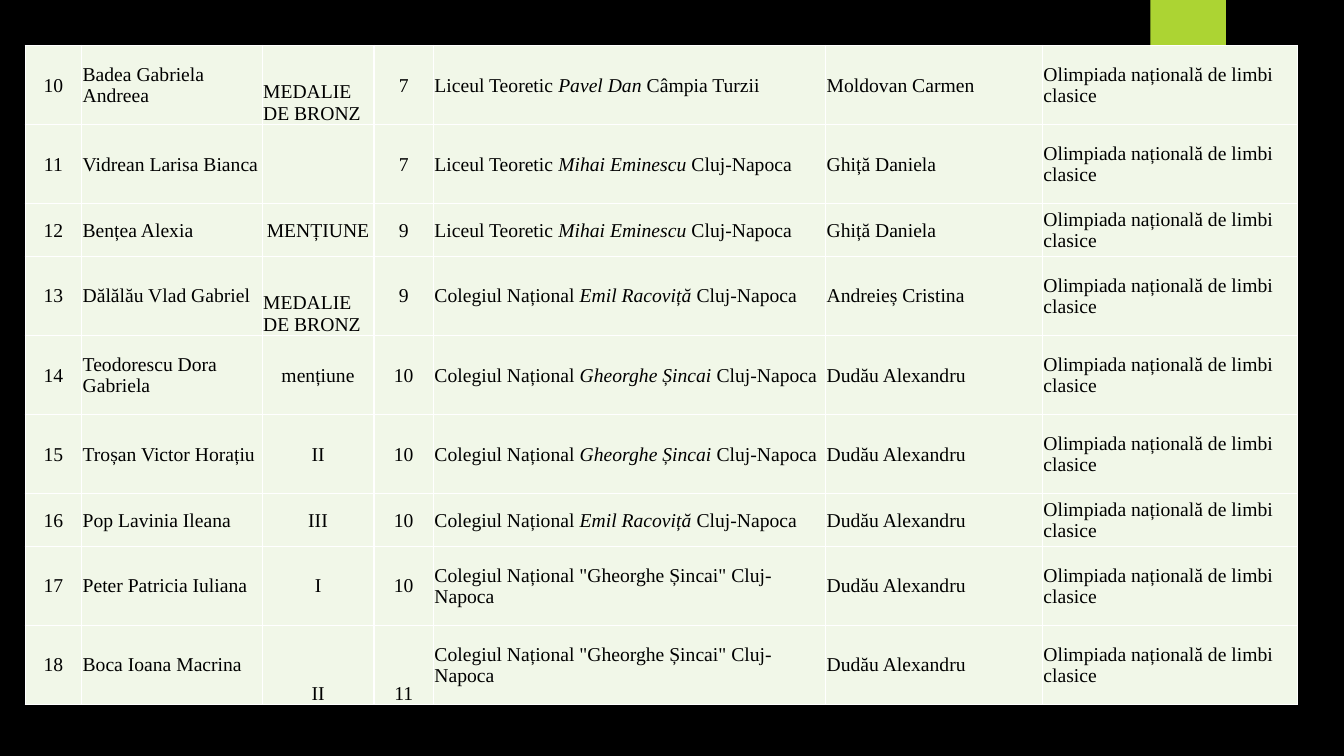
from dataclasses import dataclass

from lxml.etree import SubElement
from pptx import Presentation
from pptx.dml.color import RGBColor
from pptx.enum.shapes import MSO_SHAPE
from pptx.enum.text import MSO_ANCHOR, PP_ALIGN
from pptx.oxml.ns import qn
from pptx.util import Inches, Pt


@dataclass(frozen=True)
class Theme:
    background: str = "000000"
    accent: str = "ACD433"
    cell: str = "F1F7E8"
    border: str = "FFFFFF"
    text: str = "000000"
    font: str = "Times New Roman"
    size: float = 14
    border_width: float = 1


def set_all(target, values):
    for name, value in values.items():
        setattr(target, name, value)


class Deck:
    def __init__(self, theme):
        self.theme = theme
        self.prs = Presentation()
        set_all(self.prs, {"slide_width": Inches(13.33), "slide_height": Inches(7.5)})
        self.s = self.prs.slides.add_slide(self.prs.slide_layouts[6])
        self.fill(self.s.background, theme.background)

    def fill(self, target, color):
        target.fill.solid()
        target.fill.fore_color.rgb = RGBColor.from_string(color)

    def rect(self, x, y, w, h, color):
        sp = self.s.shapes.add_shape(
            MSO_SHAPE.RECTANGLE, Inches(x), Inches(y), Inches(w), Inches(h))
        sp.shadow.inherit = False
        self.fill(sp, color)
        sp.line.fill.background()

    def borders(self, cell):
        tcPr = cell._tc.get_or_add_tcPr()
        for side in ("L", "R", "T", "B"):
            ln = SubElement(tcPr, qn(f"a:ln{side}"), w=str(Pt(self.theme.border_width)))
            solid = SubElement(ln, qn("a:solidFill"))
            SubElement(solid, qn("a:srgbClr"), val=self.theme.border)

    def cell(self, cell, text, align, anchor):
        self.borders(cell)
        self.fill(cell, self.theme.cell)
        set_all(cell, {
            "margin_left": Inches(0.01), "margin_right": Inches(0.01),
            "margin_top": Inches(0.01), "margin_bottom": 0,
            "vertical_anchor": anchor,
        })
        p = cell.text_frame.paragraphs[0]
        p.alignment = align
        for i, part in enumerate(text.split("*")):
            if part:
                r = p.add_run()
                r.text = part
                set_all(r.font, {"name": self.theme.font, "size": Pt(self.theme.size),
                                 "italic": i % 2 == 1})
                r.font.color.rgb = RGBColor.from_string(self.theme.text)

    def table(self, x, y, widths, heights, rows, centered, left_cells, bottom_cells):
        tbl = self.s.shapes.add_table(
            len(rows), len(widths), Inches(x), Inches(y),
            Inches(sum(widths)), Inches(sum(heights))).table
        set_all(tbl, {"first_row": False, "horz_banding": False})
        for col, w in zip(tbl.columns, widths):
            col.width = Inches(w)
        for row, h in zip(tbl.rows, heights):
            row.height = Inches(h)
        for i, row in enumerate(rows):
            for j, text in enumerate(row):
                center = j in centered and (i, j) not in left_cells
                self.cell(
                    tbl.cell(i, j), text,
                    PP_ALIGN.CENTER if center else PP_ALIGN.LEFT,
                    MSO_ANCHOR.BOTTOM if (i, j) in bottom_cells else MSO_ANCHOR.MIDDLE)


CONTEST = "Olimpiada națională de limbi clasice"
BRONZE = "MEDALIE DE BRONZ"
EMINESCU = "Liceul Teoretic *Mihai Eminescu* Cluj-Napoca"
RACOVITA = "Colegiul Național *Emil Racoviță* Cluj-Napoca"
SINCAI = "Colegiul Național *Gheorghe Șincai* Cluj-Napoca"
SINCAI_QUOTED = 'Colegiul Național "Gheorghe Șincai" Cluj-Napoca'
DUDAU = "Dudău Alexandru"
GHITA = "Ghiță Daniela"

PUPILS = [
    ("Badea Gabriela Andreea", BRONZE, "7",
     "Liceul Teoretic *Pavel Dan* Câmpia Turzii", "Moldovan Carmen"),
    ("Vidrean Larisa Bianca", "", "7", EMINESCU, GHITA),
    ("Bențea Alexia", "MENȚIUNE", "9", EMINESCU, GHITA),
    ("Dălălău Vlad Gabriel", BRONZE, "9", RACOVITA, "Andreieș Cristina"),
    ("Teodorescu Dora Gabriela", "mențiune", "10", SINCAI, DUDAU),
    ("Troșan Victor Horațiu", "II", "10", SINCAI, DUDAU),
    ("Pop Lavinia Ileana", "III", "10", RACOVITA, DUDAU),
    ("Peter Patricia Iuliana", "I", "10", SINCAI_QUOTED, DUDAU),
    ("Boca Ioana Macrina", "II", "11", SINCAI_QUOTED, DUDAU),
]


def main():
    theme = Theme()
    deck = Deck(theme)
    deck.rect(11.41, 0, 0.75, 1.25, theme.accent)
    rows = [(str(n), *pupil, CONTEST) for n, pupil in enumerate(PUPILS, 10)]
    lines = [2 if i in (2, 6) else 3 for i in range(len(rows))]
    heights = [6.54 * n / sum(lines) for n in lines]
    bronze_cells = {(0, 2), (3, 2)}
    deck.table(0.25, 0.45, [0.56, 1.79, 1.11, 0.59, 3.89, 2.15, 2.53], heights, rows,
               centered={0, 2, 3}, left_cells=bronze_cells,
               bottom_cells=bronze_cells | {(8, 2), (8, 3)})
    deck.prs.save("out.pptx")


if __name__ == "__main__":
    main()
